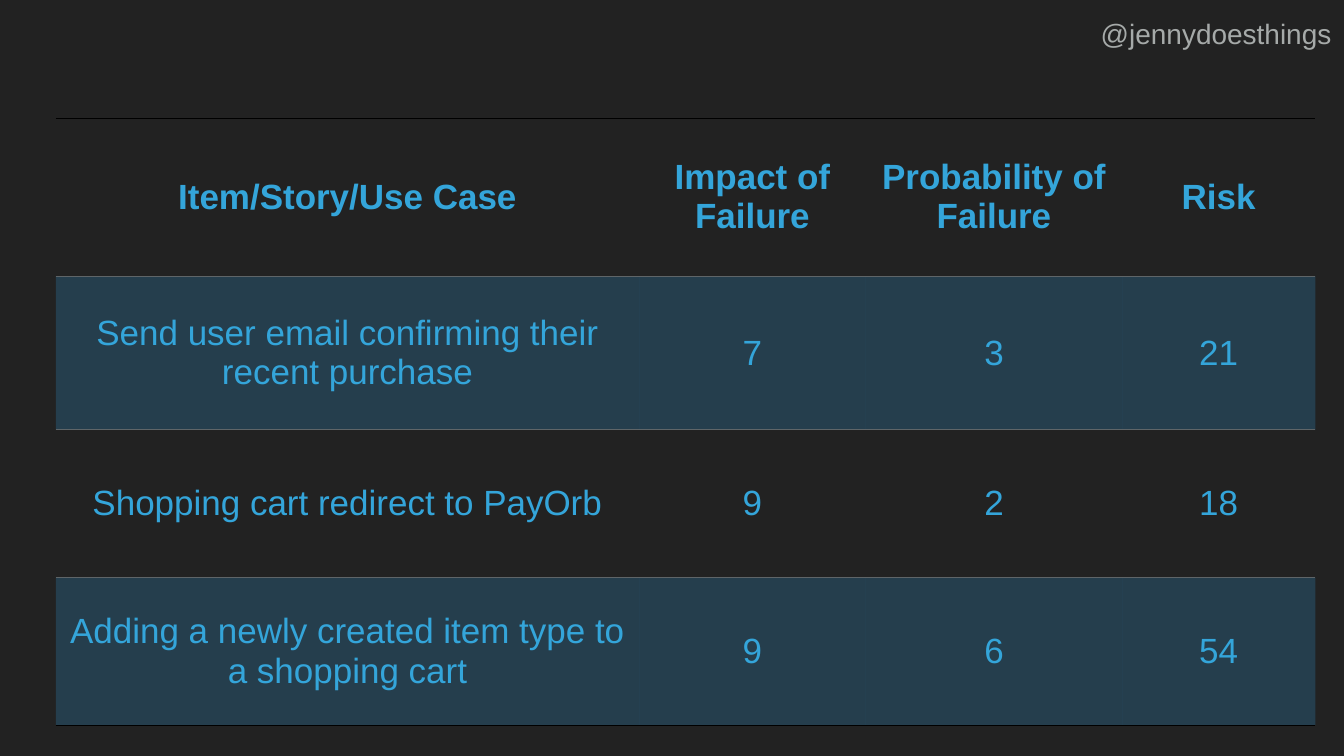
from pptx import Presentation
from pptx.dml.color import RGBColor
from pptx.enum.text import MSO_ANCHOR as Anchor, PP_ALIGN as Align
from pptx.oxml import parse_xml
from pptx.oxml.ns import nsdecls
from pptx.util import Pt

COLORS = {
    "background": "222222",
    "text": "34A5DA",
    "handle": "A6AAA9",
    "band": "2D85B9",
    "outer_rule": "000000",
    "inner_rule": "5F6568",
}
FONT = "Arial"
HANDLE = "@jennydoesthings"
RISKS = [
    ("Item/Story/Use Case", "Impact of Failure", "Probability of Failure", "Risk"),
    ("Send user email confirming their recent purchase", "7", "3", "21"),
    ("Shopping cart redirect to PayOrb", "9", "2", "18"),
    ("Adding a newly created item type to a shopping cart", "9", "6", "54"),
]
COLUMN_WIDTHS = [833, 324, 366, 276]
ROW_HEIGHTS = [226, 219.6, 211, 211]
TABLE_LEFT, TABLE_TOP = 80, 168.5
BAND_OPACITY = 29
OUTER_RULE = ("outer_rule", 0.75)
INNER_RULE = ("inner_rule", 2)


def color(name):
    return RGBColor.from_string(COLORS[name])


def add_text(paragraph, text, size, color_name, bold=False):
    run = paragraph.add_run()
    run.text = text
    run.font.name = FONT
    run.font.size = Pt(size)
    run.font.bold = bold
    run.font.color.rgb = color(color_name)


def set_margins(target, margin):
    target.margin_left = target.margin_right = Pt(margin)
    target.margin_top = target.margin_bottom = Pt(margin)


def set_borders(cell, top, bottom):
    properties = cell._tc.get_or_add_tcPr()
    borders = [("lnL", None), ("lnR", None), ("lnT", top), ("lnB", bottom)]
    for position, (tag, rule) in enumerate(borders):
        width, paint = 0, "<a:noFill/>"
        if rule:
            name, points = rule
            width = Pt(points)
            paint = f'<a:solidFill><a:srgbClr val="{COLORS[name]}"/></a:solidFill>'
        line = parse_xml(f'<a:{tag} {nsdecls("a")} w="{width}">{paint}</a:{tag}>')
        properties.insert(position, line)


def fill_band(cell):
    cell.fill.solid()
    cell.fill.fore_color.rgb = color("band")
    alpha = parse_xml(f'<a:alpha {nsdecls("a")} val="{BAND_OPACITY * 1000}"/>')
    cell._tc.tcPr.find(".//{*}srgbClr").append(alpha)


def add_risk_table(slide):
    table = slide.shapes.add_table(
        len(RISKS), len(COLUMN_WIDTHS), Pt(TABLE_LEFT), Pt(TABLE_TOP),
        Pt(sum(COLUMN_WIDTHS)), Pt(sum(ROW_HEIGHTS)),
    ).table
    table.first_row = table.horz_banding = False
    for column, width in zip(table.columns, COLUMN_WIDTHS):
        column.width = Pt(width)
    for row_index, values in enumerate(RISKS):
        row = table.rows[row_index]
        row.height = Pt(ROW_HEIGHTS[row_index])
        top = OUTER_RULE if row_index == 0 else INNER_RULE
        bottom = OUTER_RULE if row_index == len(RISKS) - 1 else INNER_RULE
        for cell, value in zip(row.cells, values):
            set_margins(cell, 7.2)
            cell.vertical_anchor = Anchor.MIDDLE
            paragraph = cell.text_frame.paragraphs[0]
            paragraph.alignment = Align.CENTER
            add_text(paragraph, value, 50, "text", bold=row_index == 0)
            if row_index % 2:
                fill_band(cell)
            else:
                cell.fill.background()
            set_borders(cell, top, bottom)


def add_handle(slide):
    frame = slide.shapes.add_textbox(Pt(1561.7), Pt(14.4), Pt(560), Pt(65.5)).text_frame
    frame.word_wrap = True
    frame.vertical_anchor = Anchor.MIDDLE
    set_margins(frame, 10.8)
    add_text(frame.paragraphs[0], HANDLE, 40, "handle")


def main():
    presentation = Presentation()
    presentation.slide_width, presentation.slide_height = Pt(1920), Pt(1080)
    slide = presentation.slides.add_slide(presentation.slide_layouts[6])
    slide.background.fill.solid()
    slide.background.fill.fore_color.rgb = color("background")
    add_risk_table(slide)
    add_handle(slide)
    presentation.save("out.pptx")


if __name__ == "__main__":
    main()
